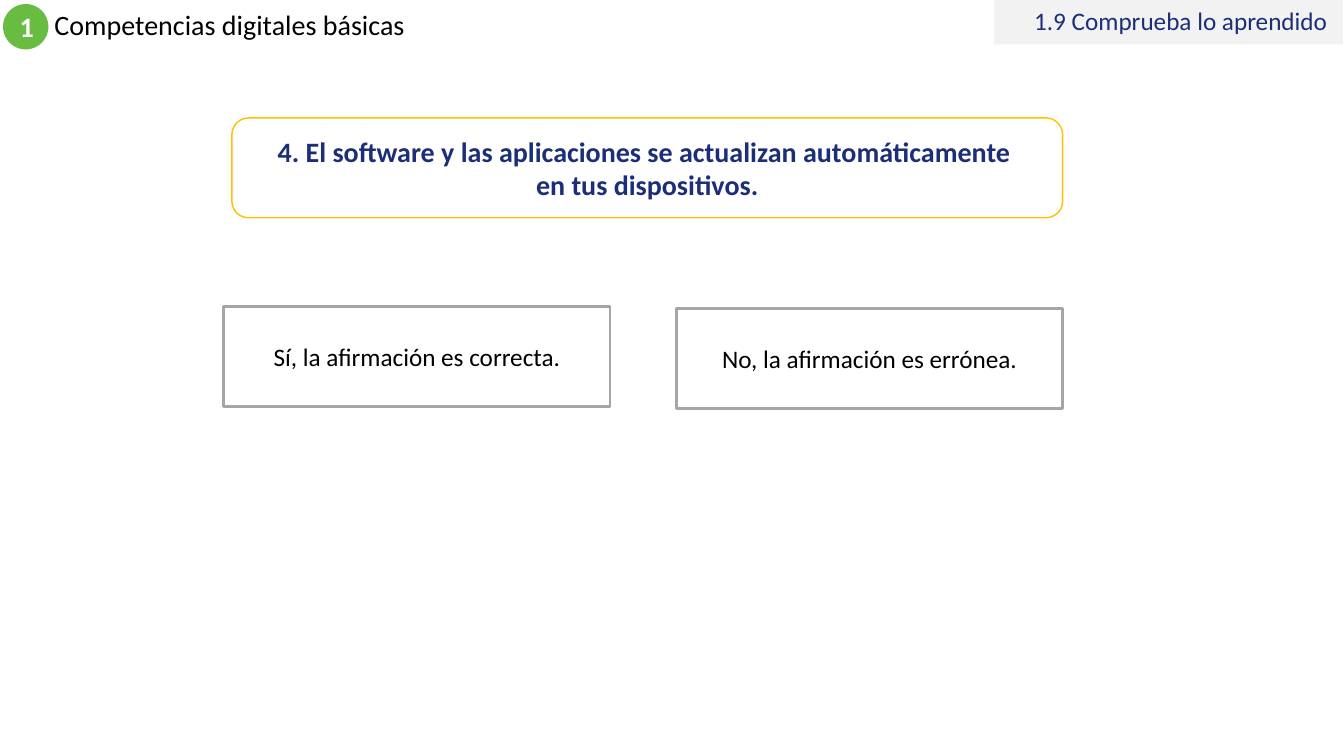
import pptx
import pptx.util
import pptx.dml.color
import pptx.enum.shapes
import pptx.enum.text

PX = 9144
THEME = {
    "font": "Calibri", "big": 20, "small": 18,
    "black": "000000", "white": "FFFFFF", "navy": "1C2E78",
    "green": "68BC42", "gold": "FFC000", "pale": "F2F2F2", "gray": "A5A5A5",
}
KIND = pptx.enum.shapes.MSO_SHAPE
ALIGN = pptx.enum.text.PP_ALIGN


def tint(name):
    return pptx.dml.color.RGBColor.from_string(THEME[name])


def write(shape, lines, size, color, align=ALIGN.CENTER, bold=False, space=1.0):
    frame = shape.text_frame
    frame.text = "\n".join(lines)
    frame.word_wrap = True
    frame.auto_size = pptx.enum.text.MSO_AUTO_SIZE.NONE
    frame.vertical_anchor = pptx.enum.text.MSO_ANCHOR.MIDDLE
    for line in frame.paragraphs:
        line.alignment = align
        line.line_spacing = space
        line.font.name = THEME["font"]
        line.font.size = pptx.util.Pt(THEME[size])
        line.font.bold = bold
        line.font.color.rgb = tint(color)


deck = pptx.Presentation()
deck.slide_width = 1333 * PX
deck.slide_height = 750 * PX
slide = deck.slides.add_slide(deck.slide_layouts[5])

title = slide.shapes.title
title.left, title.top, title.width, title.height = (n * PX for n in (44, 4, 800, 45))
write(title, ["Competencias digitales básicas"], "big", "black", ALIGN.LEFT, space=0.9)

question = ["4. El software y las aplicaciones se actualizan automáticamente ",
            "en tus dispositivos."]
boxes = [
    (KIND.OVAL, (3, 4, 45, 45), "green", None, 0,
     ["1"], "big", "white", ALIGN.CENTER, True, 1.0),
    (KIND.ROUNDED_RECTANGLE, (230, 117, 824, 99), "white", "gold", 1,
     question, "big", "navy", ALIGN.CENTER, True, 1.0),
    (KIND.RECTANGLE, (986, 0, 346, 44), "pale", None, 0,
     ["1.9 Comprueba lo aprendido "], "small", "navy", ALIGN.RIGHT, False, 0.9),
    (KIND.RECTANGLE, (671, 306, 383, 99), "white", "gray", 2,
     ["No, la afirmación es errónea."], "small", "black", ALIGN.CENTER, False, 1.0),
    (KIND.RECTANGLE, (222, 304, 383, 99), "white", "gray", 2,
     ["Sí, la afirmación es correcta."], "small", "black", ALIGN.CENTER, False, 1.0),
]
for kind, place, fill, edge, width, *text in boxes:
    box = slide.shapes.add_shape(kind, *(n * PX for n in place))
    box.shadow.inherit = False
    box.fill.solid()
    box.fill.fore_color.rgb = tint(fill)
    if edge:
        box.line.color.rgb = tint(edge)
        box.line.width = pptx.util.Pt(width)
    else:
        box.line.fill.background()
    write(box, *text)

deck.save("out.pptx")
